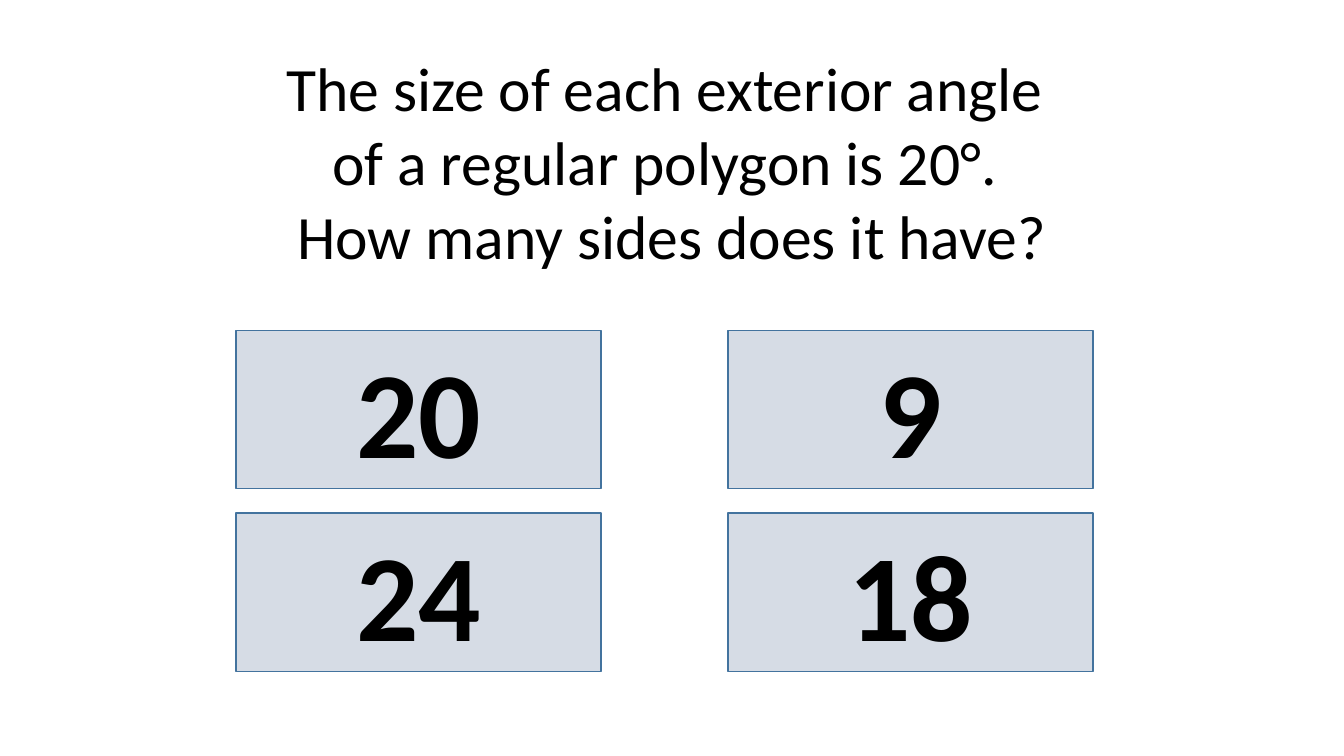
import pptx
import pptx.dml.color
import pptx.enum.shapes
import pptx.enum.text
import pptx.util

Inches = pptx.util.Inches
FONT = "Calibri"
QUESTION = [
    "The size of each exterior angle ",
    "of a regular polygon is 20°. ",
    "How many sides does it have?",
]
ANSWERS = [["20", "9"], ["24", "18"]]


def colour(value):
    return pptx.dml.color.RGBColor.from_string(value)


def add_line(para, text, size, bold):
    para.alignment = pptx.enum.text.PP_ALIGN.CENTER
    span = para.add_run()
    span.text = text
    span.font.name = FONT
    span.font.size = pptx.util.Pt(size)
    span.font.bold = bold
    span.font.color.rgb = colour("000000")


def place_question(page, left, top, width, height):
    title = page.shapes.title
    title.left, title.top = Inches(left), Inches(top)
    title.width, title.height = Inches(width), Inches(height)
    frame = title.text_frame
    frame.word_wrap = True
    frame.auto_size = pptx.enum.text.MSO_AUTO_SIZE.NONE
    frame.vertical_anchor = pptx.enum.text.MSO_ANCHOR.TOP
    for index, text in enumerate(QUESTION):
        para = frame.add_paragraph() if index else frame.paragraphs[0]
        add_line(para, text, 44, False)


def add_answer(page, text, left, top, width, height):
    box = page.shapes.add_shape(
        pptx.enum.shapes.MSO_SHAPE.RECTANGLE,
        Inches(left), Inches(top), Inches(width), Inches(height))
    box.shadow.inherit = False
    box.fill.solid()
    box.fill.fore_color.rgb = colour("D6DCE5")
    box.line.color.rgb = colour("43739E")
    box.line.width = pptx.util.Pt(1)
    box.text_frame.vertical_anchor = pptx.enum.text.MSO_ANCHOR.MIDDLE
    add_line(box.text_frame.paragraphs[0], text, 88, True)


def place_answers(page, left, top, width, height):
    column_gap, row_gap = 1.26, 0.24
    box_width = (width - column_gap) / 2
    box_height = (height - row_gap) / 2
    for row, texts in enumerate(ANSWERS):
        for column, text in enumerate(texts):
            add_answer(page, text,
                       left + column * (box_width + column_gap),
                       top + row * (box_height + row_gap),
                       box_width, box_height)


def main():
    deck = pptx.Presentation()
    deck.slide_width, deck.slide_height = Inches(13.33), Inches(7.5)
    # Title-only layout
    page = deck.slides.add_slide(deck.slide_layouts[5])
    # Question above the two-by-two grid of answers
    place_question(page, 2.1, 0.45, 9.13, 2.32)
    place_answers(page, 2.34, 3.28, 8.5, 3.38)
    deck.save("out.pptx")


if __name__ == "__main__":
    main()
